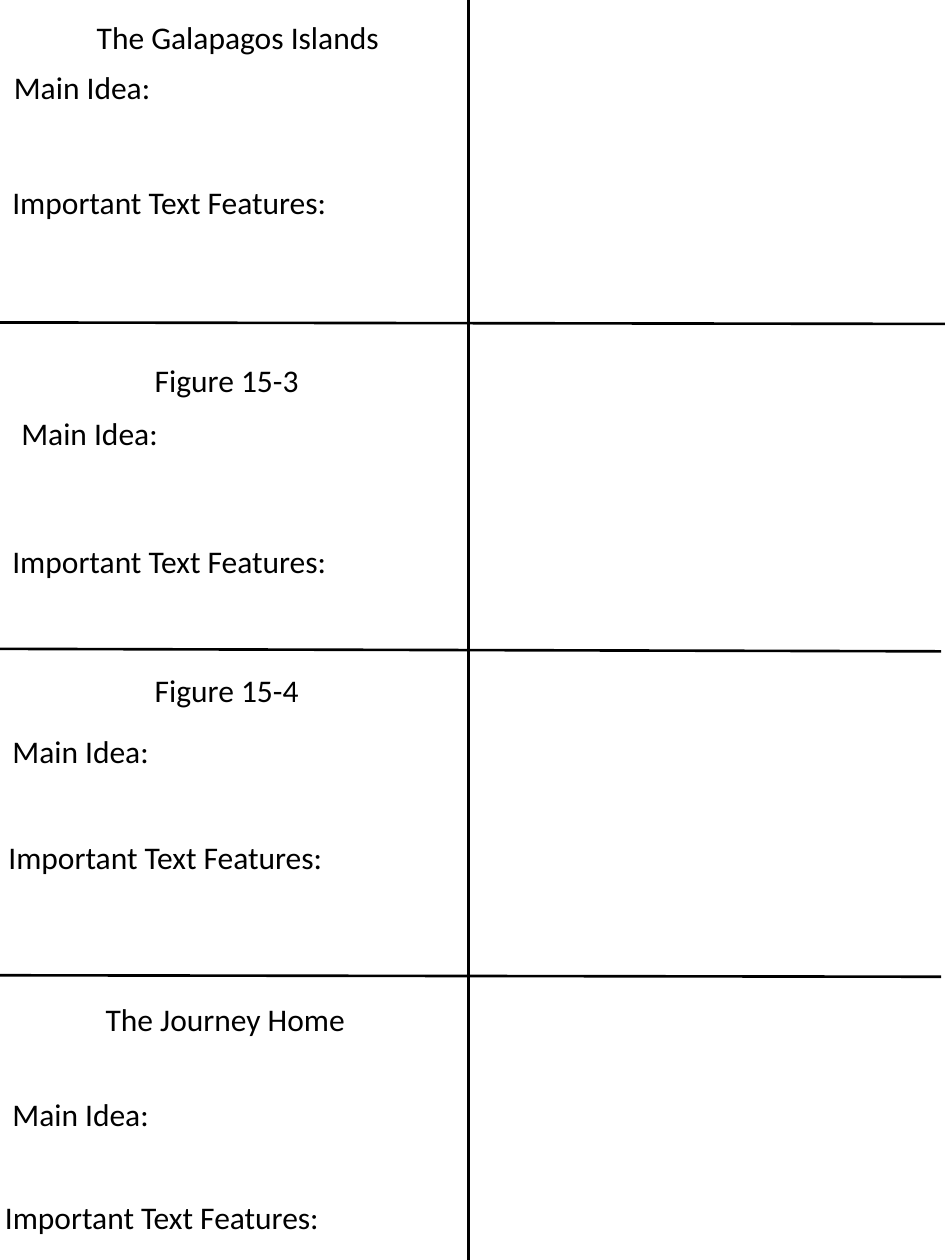
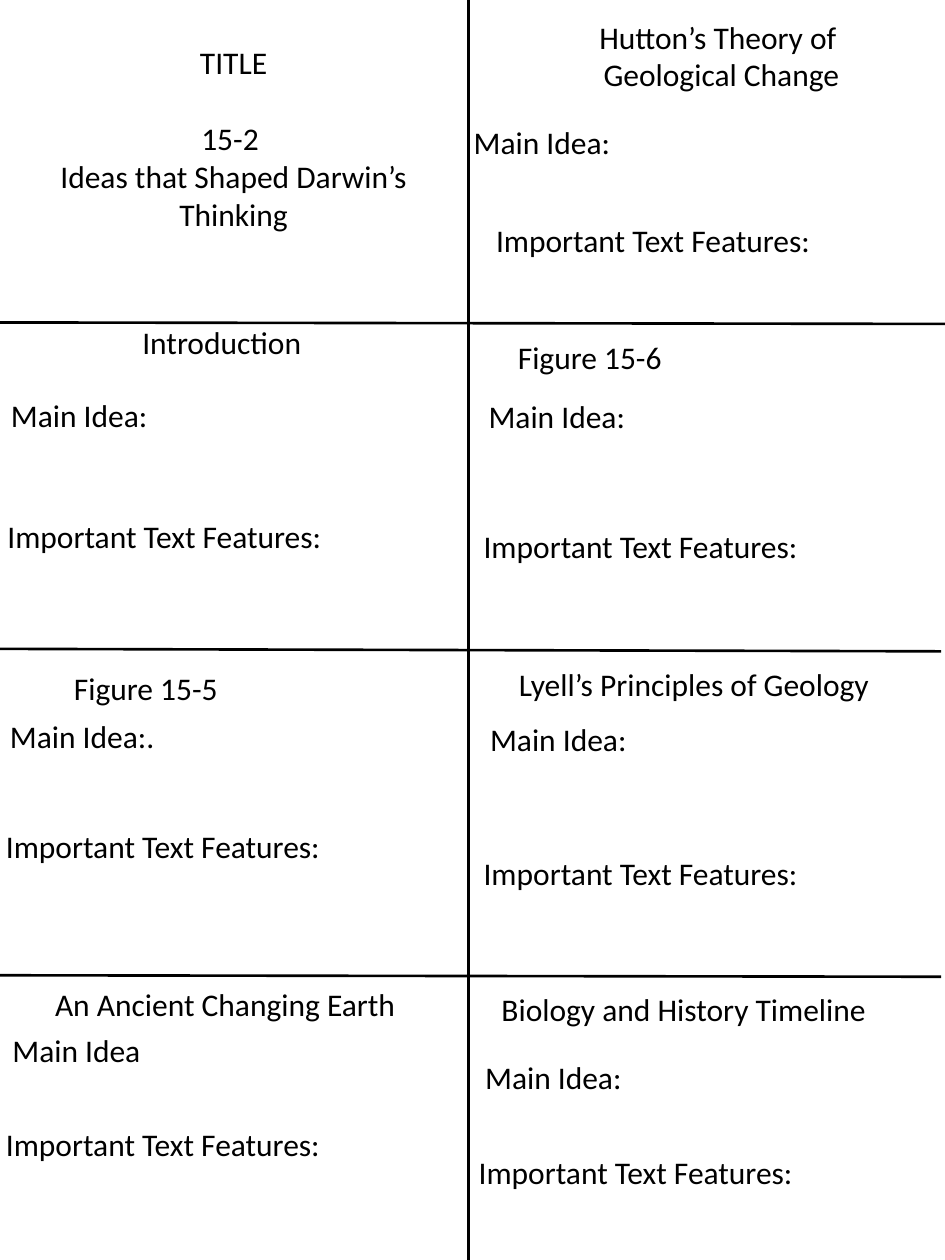
"""Build two foldable note-taking sheets on Darwin, ruled into four rows and two columns."""
from lxml.etree import SubElement
from pptx import Presentation
from pptx.dml.color import RGBColor
from pptx.enum.shapes import MSO_CONNECTOR as CONN
from pptx.enum.text import MSO_AUTO_SIZE as AUTO, PP_ALIGN as ALIGN
from pptx.oxml.ns import qn
from pptx.util import Cm, Pt

COLORS = {"ink": "000000", "paper": "FFFFFF"}
FONT, SIZE, LINE_PT = "Calibri", 18, 22
WIDTH, HEIGHT = 19.05, 25.4
LABEL_W, LABEL_H = 7.11, 1.02
MAIN, FEATURES = "Main Idea:", "Important Text Features:"

RULES = [
    (0, 6.5, WIDTH, 6.53),
    (9.45, 0, 9.45, HEIGHT),
    (-0.08, 13.08, 18.97, 13.13),
    (-0.08, 19.66, 18.97, 19.69),
]

# Each section lists its heading, main idea and text features as (text, left, top[, width]).
SHEETS = [
    [
        [("The Galapagos Islands", 1.7, 0.23), (MAIN, 0.03, 1.24), (FEATURES, 0, 3.56)],
        [("Figure 15-3", 2.87, 7.16), (MAIN, 0.18, 8.23), (FEATURES, 0, 10.8)],
        [("Figure 15-4", 2.87, 13.41), (MAIN, 0, 14.63), (FEATURES, -0.08, 16.76)],
        [("The Journey Home", 1.88, 20.04), (MAIN, 0, 21.95), (FEATURES, -0.15, 24.03)],
    ],
    [
        [(["TITLE", "15-2 ", "Ideas that Shaped Darwin’s Thinking"], -0.13, 0.74, 9.68)],
        [("Introduction", 2.62, 6.38), (MAIN, -0.03, 7.85, 9.37),
         (FEATURES, -0.1, 10.29, 10.03)],
        [("Figure 15-5", 1.24, 13.36), ("Main Idea:.", -0.05, 14.33),
         (FEATURES, -0.13, 16.54, 9.3)],
        [("An Ancient Changing Earth", 0.86, 19.74, 8.66), ("Main Idea", 0, 20.65, 9.4),
         (FEATURES, -0.13, 22.56, 10.03)],
        [(["Hutton’s Theory of ", "Geological Change"], 9.4, 0.23, 10.29),
         (MAIN, 9.3, 2.36, 9.65), (FEATURES, 9.75, 4.34, 10.03)],
        [("Figure 15-6", 10.19, 6.68, 8.28), (MAIN, 9.6, 7.87),
         (FEATURES, 9.5, 10.49, 10.03)],
        [("Lyell’s Principles of Geology", 10.21, 13.28, 8.41), (MAIN, 9.63, 14.4, 9.63),
         (FEATURES, 9.5, 17.09, 10.03)],
        [("Biology and History Timeline", 9.86, 19.84, 8.94), (MAIN, 9.53, 21.21),
         (FEATURES, 9.4, 23.11)],
    ],
]
SPACE_BEFORE = {"15-2 ": LINE_PT}


def rgb(name):
    return RGBColor.from_string(COLORS[name])


def add_rule(s, *ends):
    line = s.shapes.add_connector(CONN.STRAIGHT, *map(Cm, ends))
    line.line.color.rgb = rgb("ink")
    line.line.width = Pt(1.5)
    SubElement(line._element.spPr, qn("a:effectLst"))


def add_text(s, text, left, top, width=LABEL_W):
    lines = [text] if isinstance(text, str) else text
    height = LABEL_H + (len(lines) - 1) * Pt(LINE_PT).cm
    sp = s.shapes.add_textbox(*map(Cm, (left, top, width, height)))
    tf = sp.text_frame
    tf.word_wrap = True
    tf.auto_size = AUTO.SHAPE_TO_FIT_TEXT
    for i, line in enumerate(lines):
        p = tf.add_paragraph() if i else tf.paragraphs[0]
        p.text = line
        p.alignment = ALIGN.LEFT if len(lines) == 1 else ALIGN.CENTER
        p.space_before = Pt(SPACE_BEFORE.get(line, 0))
        p.font.name = FONT
        p.font.size = Pt(SIZE)
        p.font.color.rgb = rgb("ink")


def add_sheet(prs, sections):
    s = prs.slides.add_slide(prs.slide_layouts[6])
    s.background.fill.solid()
    s.background.fill.fore_color.rgb = rgb("paper")
    for rule in RULES:
        add_rule(s, *rule)
    for section in sections:
        for entry in section:
            add_text(s, *entry)


def main():
    prs = Presentation()
    prs.slide_width, prs.slide_height = Cm(WIDTH), Cm(HEIGHT)
    for sections in SHEETS:
        add_sheet(prs, sections)
    prs.save("out.pptx")


if __name__ == "__main__":
    main()
